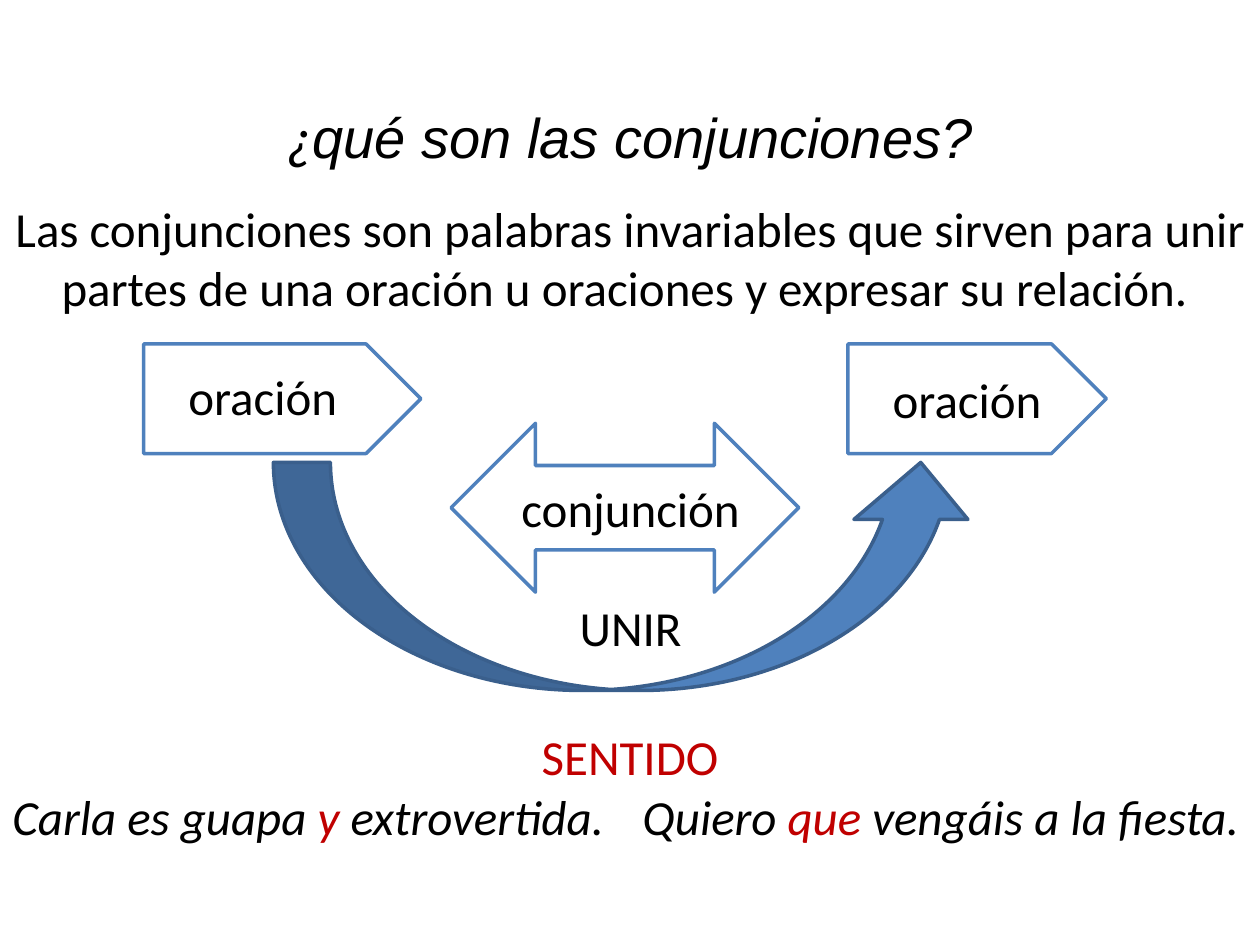
from pptx import Presentation
from pptx.dml.color import RGBColor
from pptx.enum import shapes, text
from pptx.util import Inches, Pt

BLACK = RGBColor(0x00, 0x00, 0x00)
WHITE = RGBColor(0xFF, 0xFF, 0xFF)
RED = RGBColor(0xC0, 0x00, 0x00)
BLUE = RGBColor(0x4F, 0x81, 0xBD)
DARK_BLUE = RGBColor(0x3A, 0x5F, 0x8C)

CENTER = text.PP_ALIGN.CENTER
JUSTIFY = text.PP_ALIGN.JUSTIFY
TOP = text.MSO_ANCHOR.TOP
MIDDLE = text.MSO_ANCHOR.MIDDLE


def add_span(para, words, size=28, color=BLACK, italic=False, font="Calibri"):
    """Append one formatted run to a paragraph."""
    span = para.add_run()
    span.text = words
    span.font.size = Pt(size)
    span.font.name = font
    span.font.italic = italic
    span.font.color.rgb = color


def prepare_frame(box, align, anchor):
    """Set wrapping, anchor and alignment, and return the first paragraph."""
    frame = box.text_frame
    frame.word_wrap = True
    frame.auto_size = text.MSO_AUTO_SIZE.SHAPE_TO_FIT_TEXT
    frame.vertical_anchor = anchor
    para = frame.paragraphs[0]
    para.alignment = align
    return para


def add_text(page, left, top, width, height, align=CENTER, anchor=TOP):
    """Add a text box and return its paragraph."""
    box = page.shapes.add_textbox(*map(Inches, (left, top, width, height)))
    return prepare_frame(box, align, anchor)


def add_figure(page, kind, left, top, width, height, fill=WHITE, line=BLUE):
    """Add a filled and outlined preset shape."""
    figure = page.shapes.add_shape(kind, *map(Inches, (left, top, width, height)))
    figure.shadow.inherit = False
    figure.fill.solid()
    figure.fill.fore_color.rgb = fill
    figure.line.color.rgb = line
    figure.line.width = Pt(2)


def set_title(page):
    """Place the title and write it in its two fonts."""
    title = page.shapes.title
    title.left, title.top = Inches(0), Inches(0.76)
    title.width, title.height = Inches(10), Inches(0.64)
    para = prepare_frame(title, CENTER, TOP)
    add_span(para, "¿", 32, italic=True)
    add_span(para, "qué son las conjunciones?", 32, italic=True, font="Arial")


def add_example(page, left, width, before, conjunction, after):
    """Add an example sentence with its conjunction in red."""
    para = add_text(page, left, 6.19, width, 0.57, JUSTIFY, MIDDLE)
    for words, color in ((before, BLACK), (conjunction, RED), (after, BLACK)):
        add_span(para, words, color=color, italic=True)


def add_diagram(page):
    """Draw two clauses joined by a conjunction."""
    preset = shapes.MSO_SHAPE
    for left, width, label_top in ((1.14, 2.2, 2.86), (6.73, 2.05, 2.88)):
        add_figure(page, preset.PENTAGON, left, 2.73, width, 0.87)
        add_span(add_text(page, left, label_top, 1.89, 0.57), "oración")
    add_figure(page, preset.LEFT_RIGHT_ARROW, 3.58, 3.36, 2.76, 1.34)
    add_span(add_text(page, 3.98, 3.75, 2.05, 0.57), "conjunción")
    add_figure(page, preset.CURVED_UP_ARROW, 2.17, 3.67, 5.59, 1.81, BLUE, DARK_BLUE)
    add_span(add_text(page, 4.06, 4.69, 1.89, 0.57), "UNIR")
    add_span(add_text(page, 3.9, 5.72, 2.2, 0.57), "SENTIDO", color=RED)


def main():
    """Build and save the slide."""
    deck = Presentation()
    deck.slide_width, deck.slide_height = Inches(10), Inches(7.5)
    page = deck.slides.add_slide(deck.slide_layouts[5])
    set_title(page)
    add_span(
        add_text(page, 0, 1.53, 10, 1.04),
        "Las conjunciones son palabras invariables que sirven para unir "
        "partes de una oración u oraciones y expresar su relación. ",
    )
    add_diagram(page)
    add_example(page, 0, 5, "Carla es guapa ", "y", " extrovertida.")
    add_example(page, 5, 5.21, "Quiero ", "que", " vengáis a la fiesta.")
    deck.save("out.pptx")


if __name__ == "__main__":
    main()
